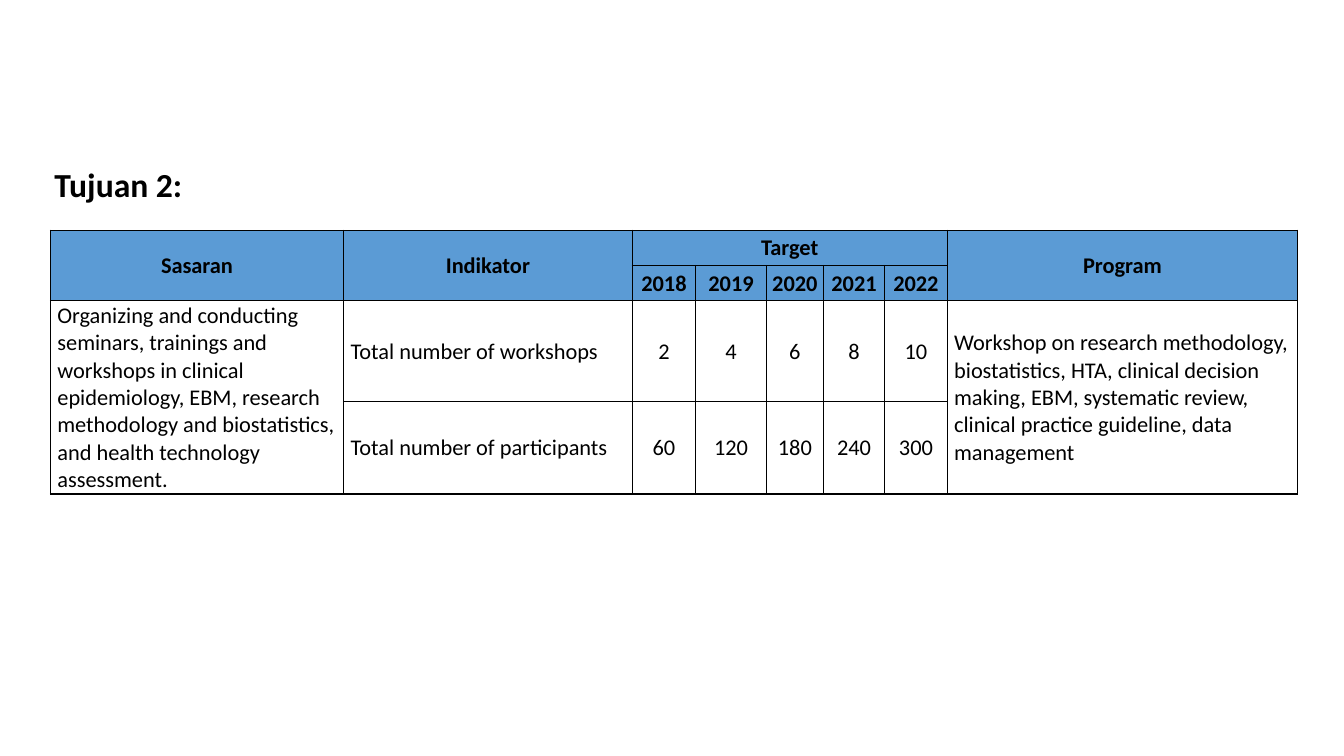
from lxml.etree import SubElement
from pptx import Presentation
from pptx.dml.color import RGBColor
from pptx.enum.text import MSO_ANCHOR, PP_ALIGN
from pptx.oxml.ns import qn
from pptx.util import Pt

COLORS = {"header": "5B9BD5", "body": "FFFFFF", "ink": "000000"}
FONT = "Calibri"

COLUMN_WIDTHS = [209.4, 206.2, 45.4, 50.4, 40.8, 43.8, 44.6, 250.4]
ROW_HEIGHTS = [25.2, 25.2, 72, 66]
HEADER_ROWS = 2
TARGETS = slice(2, 7)

SASARAN = ("Organizing and conducting seminars, trainings and workshops in clinical "
           "epidemiology, EBM, research methodology and biostatistics, and health "
           "technology assessment.")
PROGRAM = ("Workshop on research methodology, biostatistics, HTA, clinical decision "
           "making, EBM, systematic review, clinical practice guideline, data management")
ROWS = [
    ["Sasaran", "Indikator", "Target", "", "", "", "", "Program"],
    ["", "", "2018", "2019", "2020", "2021", "2022", ""],
    [SASARAN, "Total number of workshops", "2", "4", "6", "8", "10", PROGRAM],
    ["", "Total number of participants", "60", "120", "180", "240", "300", ""],
]
# First and last cell of each merged block, as (row, column)
MERGES = [((0, 0), (1, 0)), ((0, 1), (1, 1)), ((0, 2), (0, 6)),
          ((0, 7), (1, 7)), ((2, 0), (3, 0)), ((2, 7), (3, 7))]


def set_font(paragraph, size, bold):
    font = paragraph.font
    font.name, font.size, font.bold = FONT, Pt(size), bold
    font.color.rgb = RGBColor.from_string(COLORS["ink"])


def add_heading(slide, left, top, width, height):
    frame = slide.shapes.add_textbox(Pt(left), Pt(top), Pt(width), Pt(height)).text_frame
    frame.word_wrap = True
    frame.vertical_anchor = MSO_ANCHOR.MIDDLE
    heading = frame.paragraphs[0]
    heading.text = "Tujuan 2:"
    heading.line_spacing = 0.9
    set_font(heading, 24, True)


def add_borders(cell):
    properties = cell._tc.get_or_add_tcPr()
    for side in ("a:lnL", "a:lnR", "a:lnT", "a:lnB"):
        border = SubElement(properties, qn(side), w=str(Pt(1)))
        fill = SubElement(border, qn("a:solidFill"))
        SubElement(fill, qn("a:srgbClr"), val=COLORS["ink"])


def format_cell(cell, text, is_header, centred):
    add_borders(cell)
    cell.fill.solid()
    cell.fill.fore_color.rgb = RGBColor.from_string(COLORS["header" if is_header else "body"])
    cell.vertical_anchor = MSO_ANCHOR.MIDDLE
    cell.margin_left = cell.margin_right = cell.margin_top = Pt(0.72)
    cell.margin_bottom = 0
    paragraph = cell.text_frame.paragraphs[0]
    paragraph.text = text
    if centred:
        paragraph.alignment = PP_ALIGN.CENTER
    else:
        paragraph._p.get_or_add_pPr().set("marL", str(Pt(4.32)))
    set_font(paragraph, 16, is_header)


def add_target_table(slide, left, top):
    table = slide.shapes.add_table(
        len(ROW_HEIGHTS), len(COLUMN_WIDTHS), Pt(left), Pt(top),
        Pt(sum(COLUMN_WIDTHS)), Pt(sum(ROW_HEIGHTS))).table
    table.first_row = table.horz_banding = False
    for column, width in zip(table.columns, COLUMN_WIDTHS):
        column.width = Pt(width)
    for row, height in zip(table.rows, ROW_HEIGHTS):
        row.height = Pt(height)

    target_columns = range(len(COLUMN_WIDTHS))[TARGETS]
    for r, texts in enumerate(ROWS):
        is_header = r < HEADER_ROWS
        for c, text in enumerate(texts):
            format_cell(table.cell(r, c), text, is_header, is_header or c in target_columns)
    for first, last in MERGES:
        table.cell(*first).merge(table.cell(*last))


def main():
    presentation = Presentation()
    presentation.slide_width, presentation.slide_height = Pt(960), Pt(540)
    slide = presentation.slides.add_slide(presentation.slide_layouts[6])
    add_heading(slide, left=31.7, top=113, width=846, height=40)
    add_target_table(slide, left=36, top=164.4)
    presentation.save("out.pptx")


if __name__ == "__main__":
    main()
